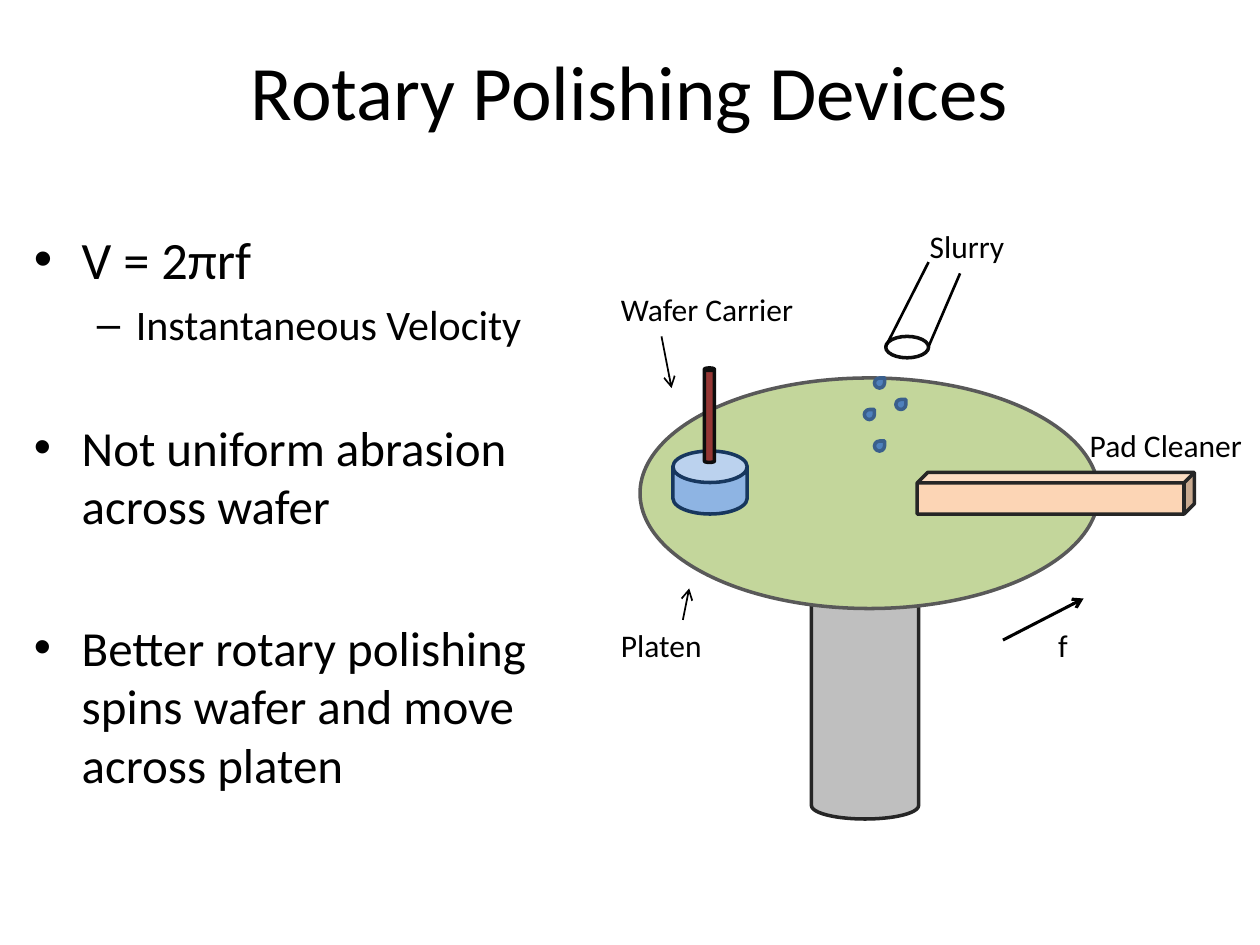
"""Build the slide on rotary polishing devices."""
from lxml.etree import SubElement
from pptx import Presentation
from pptx.dml.color import RGBColor
from pptx.enum.shapes import MSO_CONNECTOR, MSO_SHAPE as SHAPE
from pptx.enum.text import MSO_ANCHOR, PP_ALIGN
from pptx.oxml.ns import qn
from pptx.util import Inches, Pt

COLORS = {
    "black": "000000", "near_black": "0D0D0D", "white": "FFFFFF", "dark": "262626",
    "post": "BFBFBF", "platen": "C3D69B", "platen_edge": "595959",
    "carrier": "8EB4E3", "carrier_edge": "17375E", "cleaner": "FCD5B5",
    "drop": "4F81BD", "drop_edge": "3A5F8C", "rod": "953735",
}
FONT = "Calibri"


def format_runs(paragraph, size):
    for run in paragraph.runs:
        run.font.name = FONT
        run.font.size = Pt(size)
        run.font.color.rgb = RGBColor.from_string(COLORS["black"])


def add_part(slide, kind, box, fill, edge):
    shape = slide.shapes.add_shape(kind, *map(Inches, box))
    shape.shadow.inherit = False
    shape.fill.solid()
    shape.fill.fore_color.rgb = RGBColor.from_string(COLORS[fill])
    shape.line.color.rgb = RGBColor.from_string(COLORS[edge])
    shape.line.width = Pt(2)
    return shape


presentation = Presentation()
presentation.slide_width = Inches(10)
presentation.slide_height = Inches(7.5)
slide = presentation.slides.add_slide(presentation.slide_layouts[5])

title = slide.shapes.title
title.left, title.top, title.width, title.height = map(Inches, (0.5, 0.25, 9, 0.92))
title.text_frame.text = "Rotary Polishing Devices"
title.text_frame.vertical_anchor = MSO_ANCHOR.MIDDLE
title.text_frame.paragraphs[0].alignment = PP_ALIGN.CENTER
format_runs(title.text_frame.paragraphs[0], 44)

points = [
    ("V = 2πrf", 0, 30, 6),
    ("Instantaneous Velocity", 1, 24, 5),
    ("Not uniform abrasion across wafer", 0, 28, 39),
    ("Better rotary polishing spins wafer and move across platen", 0, 28, 47),
]
bullets = [("•", 0.38, -0.38), ("–", 0.81, -0.31)]
body = slide.shapes.add_textbox(*map(Inches, (0.17, 1.75, 4.25, 4.95))).text_frame
body.word_wrap = True
for index, (text, level, size, space) in enumerate(points):
    paragraph = body.add_paragraph() if index else body.paragraphs[0]
    paragraph.text = text
    paragraph.level = level
    paragraph.space_before = Pt(space)
    format_runs(paragraph, size)
    bullet, margin, indent = bullets[level]
    properties = paragraph._p.get_or_add_pPr()
    properties.set("marL", str(Inches(margin)))
    properties.set("indent", str(Inches(indent)))
    SubElement(properties, qn("a:buFont"), typeface="Arial")
    SubElement(properties, qn("a:buChar"), char=bullet)

add_part(slide, SHAPE.CAN, (6.44, 4.25, 0.85, 2.25), "post", "dark")
add_part(slide, SHAPE.OVAL, (5.08, 3, 3.64, 1.83), "platen", "platen_edge")
carrier = add_part(slide, SHAPE.CAN, (5.34, 3.58, 0.59, 0.5), "carrier", "carrier_edge")
carrier.adjustments[0] = 0.5
add_part(slide, SHAPE.CUBE, (7.28, 3.75, 2.2, 0.33), "cleaner", "dark")
add_part(slide, SHAPE.OVAL, (7.03, 2.67, 0.34, 0.17), "white", "near_black")
for left, top in [(6.94, 3), (7.11, 3.17), (6.86, 3.25), (6.94, 3.5)]:
    add_part(slide, SHAPE.TEAR, (left, top, 0.08, 0.08), "drop", "drop_edge")
add_part(slide, SHAPE.CAN, (5.59, 2.92, 0.08, 0.75), "rod", "near_black")

lines = [
    ((7.03, 2.75, 7.37, 2.08), 1.5, False),
    ((7.37, 2.75, 7.62, 2.17), 1.5, False),
    ((5.25, 2.67, 5.33, 3.08), 1, True),
    ((5.42, 4.92, 5.47, 4.67), 1, True),
    ((7.96, 5.08, 8.6, 4.75), 1.75, True),
]
for ends, width, has_arrow in lines:
    connector = slide.shapes.add_connector(MSO_CONNECTOR.STRAIGHT, *map(Inches, ends))
    connector.line.color.rgb = RGBColor.from_string(COLORS["black"])
    connector.line.width = Pt(width)
    if has_arrow:
        SubElement(connector.line._get_or_add_ln(), qn("a:tailEnd"), type="arrow")
    SubElement(connector._element.spPr, qn("a:effectLst"))

labels = [
    ("Platen", 4.83, 4.92, 0.86),
    ("Wafer Carrier", 4.83, 2.25, 1.61),
    ("Slurry", 7.28, 1.75, 0.81),
    ("Pad Cleaner", 8.55, 3.33, 1.45),
    ("f", 8.3, 4.92, 0.28),
]
for text, left, top, width in labels:
    label = slide.shapes.add_textbox(*map(Inches, (left, top, width, 0.4))).text_frame
    label.word_wrap = False
    label.text = text
    format_runs(label.paragraphs[0], 18)

presentation.save("out.pptx")
